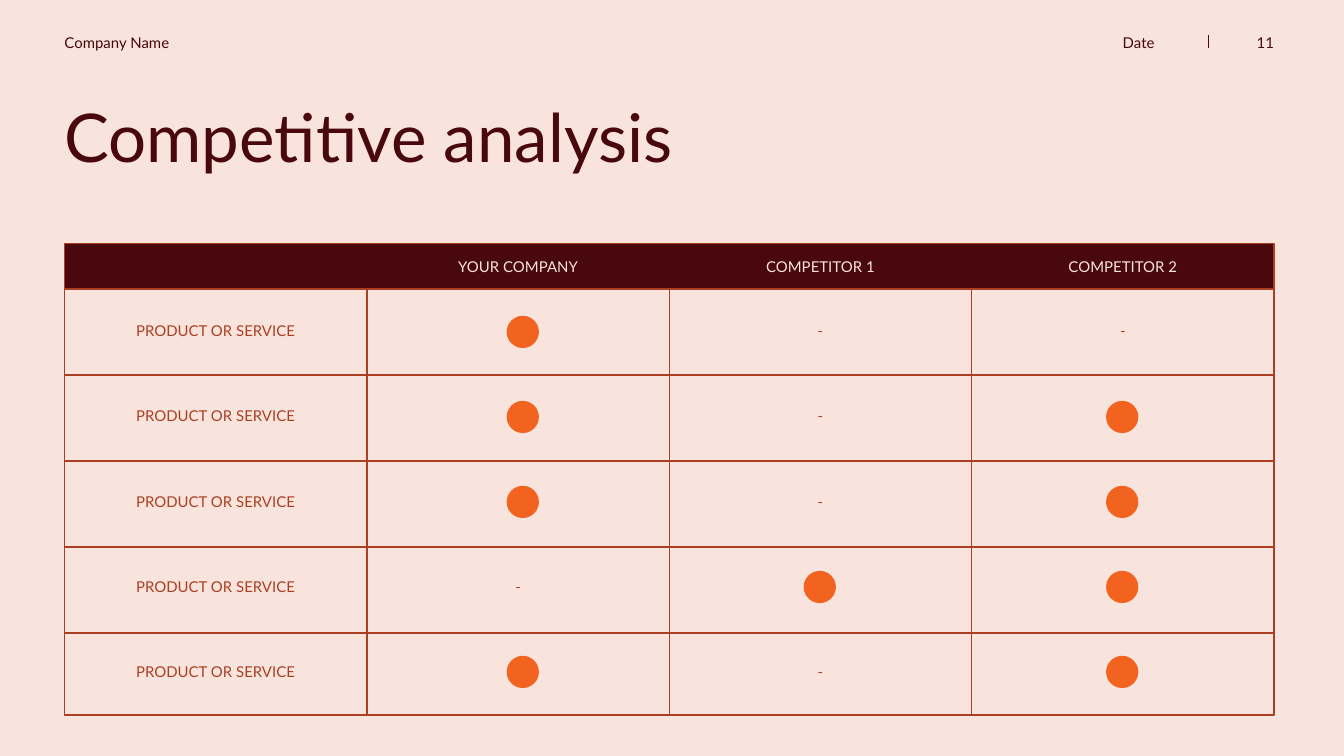
from lxml import etree
from pptx import Presentation
from pptx import util as u
from pptx.dml.color import RGBColor
from pptx.enum import shapes, text
from pptx.oxml.ns import qn

COLORS = {
    "paper": "F8E4DC",
    "wine": "49070E",
    "rust": "AB3F23",
    "orange": "F2631F",
}
COMPANIES = ["YOUR COMPANY", "COMPETITOR 1", "COMPETITOR 2"]
# One row per product: True is a dot, False is a dash
OFFERS = [
    (True, False, False),
    (True, False, True),
    (True, False, True),
    (False, True, True),
    (True, False, True),
]

LEFT, TOP, WIDTH, HEIGHT = 0.48, 1.81, 9, 3.51
RIGHT, BOTTOM = LEFT + WIDTH, TOP + HEIGHT
COLUMN = WIDTH / (len(COMPANIES) + 1)
HEADER = 0.34
ROW = 0.64
BODY_TOP = TOP + HEADER
GAPS = len(OFFERS) - 1
LABEL_TOP, LABEL_STEP = 2.29, (4.83 - 2.29) / GAPS
DOT_TOP, DOT_STEP, DOT_SIZE = 2.35, (4.88 - 2.35) / GAPS, 0.24
DOT_LEFTS = [3.77, 5.98, 8.23]


class SlideBuilder:
    """Holds the style and the current slide."""

    font = "Lato"
    line_width = 0.75

    def __init__(self, slide):
        self.slide = slide
        fill = slide.background.fill
        fill.solid()
        fill.fore_color.rgb = self.color("paper")

    def color(self, name):
        return RGBColor.from_string(COLORS[name])

    def shape(self, kind, left, top, width, height, fill=None, line=None):
        shape = self.slide.shapes.add_shape(
            kind, *map(u.Inches, (left, top, width, height)))
        shape.shadow.inherit = False
        if fill:
            shape.fill.solid()
            shape.fill.fore_color.rgb = self.color(fill)
        else:
            shape.fill.background()
        if line:
            shape.line.color.rgb = self.color(line)
            shape.line.width = u.Pt(self.line_width)
        else:
            shape.line.fill.background()

    def line(self, x1, y1, x2, y2, color):
        line = self.slide.shapes.add_connector(
            shapes.MSO_CONNECTOR.STRAIGHT, *map(u.Inches, (x1, y1, x2, y2)))
        line.line.color.rgb = self.color(color)
        line.line.width = u.Pt(self.line_width)
        etree.SubElement(line._element.spPr, qn("a:effectLst"))

    def text(self, words, left, top, width, height, color="wine", size=8,
             align=text.PP_ALIGN.LEFT, anchor=text.MSO_ANCHOR.TOP, inset=0):
        box = self.slide.shapes.add_textbox(
            *map(u.Inches, (left, top, width, height)))
        frame = box.text_frame
        frame.word_wrap = True
        frame.vertical_anchor = anchor
        frame.margin_left = frame.margin_right = u.Inches(inset)
        frame.margin_top = frame.margin_bottom = u.Inches(inset)
        frame.text = words
        para = frame.paragraphs[0]
        para.alignment = align
        font = para.runs[0].font
        font.name = self.font
        font.size = u.Pt(size)
        font.color.rgb = self.color(color)

    def cell(self, words, column, top, color):
        self.text(words, LEFT + column * COLUMN, top, COLUMN, HEADER, color,
                  align=text.PP_ALIGN.CENTER,
                  anchor=text.MSO_ANCHOR.MIDDLE, inset=0.1)

    def dot(self, left, top):
        self.shape(shapes.MSO_SHAPE.OVAL, left, top, DOT_SIZE, DOT_SIZE,
                   fill="orange")


def main():
    deck = Presentation()
    deck.slide_width = u.Inches(10)
    deck.slide_height = u.Inches(10 * 9 / 16)
    page = SlideBuilder(deck.slides.add_slide(deck.slide_layouts[6]))

    # Divider in the page header
    page.line(8.99, 0.26, 8.99, 0.36, "wine")

    # Grid: header band, frame, row and column rules
    rectangle = shapes.MSO_SHAPE.RECTANGLE
    page.shape(rectangle, LEFT, TOP, WIDTH, HEADER, fill="wine")
    page.shape(rectangle, LEFT, TOP, WIDTH, HEIGHT, line="rust")
    for row in range(len(OFFERS)):
        y = BODY_TOP + row * ROW
        page.line(LEFT, y, RIGHT, y, "rust")
    for column in range(1, len(COMPANIES) + 1):
        x = LEFT + column * COLUMN
        page.line(x, BOTTOM, x, BODY_TOP, "rust")

    # Title and page header
    page.text("Competitive analysis", LEFT, 0.71, WIDTH, 0.61, size=36)
    page.text("11", 9.06, 0.25, 0.42, 0.25, align=text.PP_ALIGN.RIGHT)
    page.text("Date", 7.44, 0.25, 1.15, 0.16, align=text.PP_ALIGN.RIGHT)
    page.text("Company Name", LEFT, 0.25, 2.07, 0.25)

    # Column headings
    for column, company in enumerate(COMPANIES, start=1):
        page.cell(company, column, TOP, "paper")

    # Product rows
    for row, offers in enumerate(OFFERS):
        label_top = LABEL_TOP + row * LABEL_STEP
        page.cell("PRODUCT OR SERVICE", 0, label_top, "rust")
        for column, offered in enumerate(offers, start=1):
            if offered:
                page.dot(DOT_LEFTS[column - 1], DOT_TOP + row * DOT_STEP)
            else:
                page.cell("-", column, label_top, "rust")

    deck.save("out.pptx")


if __name__ == "__main__":
    main()
